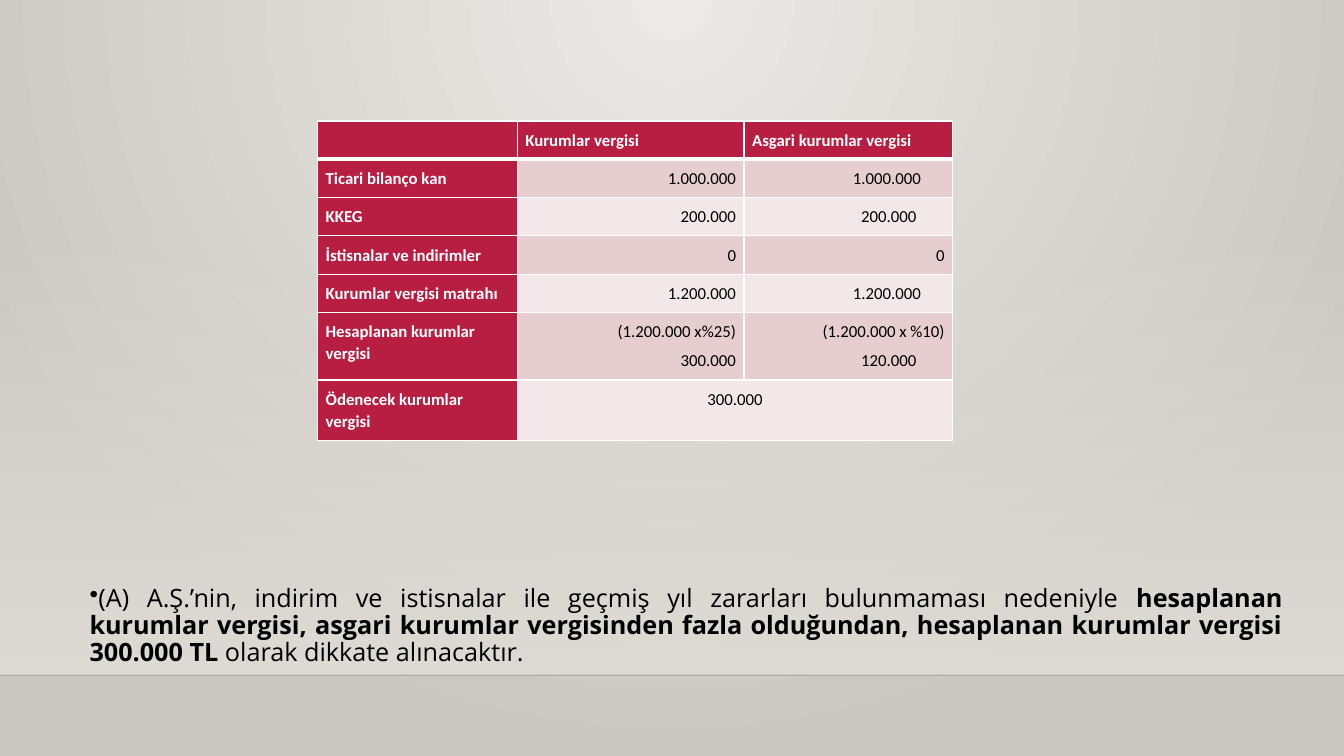
import dataclasses
import typing

import pptx
import pptx.dml.color
import pptx.enum.shapes
import pptx.enum.text
import pptx.oxml.ns
import pptx.oxml.xmlchemy
import pptx.util
from lxml import etree

PX = 9144  # EMU per px, 100 px to the inch
ALIGN = pptx.enum.text.PP_ALIGN
qn = pptx.oxml.ns.qn


@dataclasses.dataclass(frozen=True)
class Theme:
    glow: str = "ECEAE7"
    edge: str = "CAC7C1"
    wall: str = "DFDBD5"
    floor_line: str = "000001"
    accent: str = "B71E42"
    bands: tuple[str, str] = ("E6CDCF", "F3E8E9")
    light: str = "FFFFFF"
    dark: str = "000000"
    table_font: str = "Calibri"
    body_font: str = "Open Sans"
    table_size: float = 12
    body_size: float = 18


THEME = Theme()


@dataclasses.dataclass(frozen=True)
class Line:
    text: str
    align: ALIGN = ALIGN.LEFT
    indent: int = 0
    after: float = 7.5


@dataclasses.dataclass(frozen=True)
class Row:
    height: int
    label: str
    amounts: tuple[tuple[Line, ...], ...]


def right(text: str, after: float = 7.5) -> Line:
    return Line(text, ALIGN.RIGHT, after=after)


COLUMNS = (198, 225, 207)
ROWS = (
    Row(38, "", ((Line("Kurumlar vergisi"),), (Line("Asgari kurumlar vergisi"),))),
    Row(38, "Ticari bilanço kan", ((right("1.000.000"),), (Line("1.000.000", indent=100),))),
    Row(38, "KKEG", ((right("200.000"),), (Line("200.000", indent=108),))),
    Row(38, "İstisnalar ve indirimler", ((right("0"),), (right("0"),))),
    Row(38, "Kurumlar vergisi matrahı", ((right("1.200.000"),), (Line("1.200.000", indent=100),))),
    Row(67, "Hesaplanan kurumlar vergisi", (
        (right("(1.200.000 x%25)", after=5), right("300.000")),
        (right("(1.200.000 x %10)", after=5), Line("120.000", indent=108)),
    )),
    Row(60, "Ödenecek kurumlar vergisi", ((Line("300.000", ALIGN.CENTER),),)),
)
CONCLUSION = (
    ("(A) A.Ş.’nin, indirim ve istisnalar ile geçmiş yıl zararları bulunmaması nedeniyle ", False),
    ("hesaplanan kurumlar vergisi, asgari kurumlar vergisinden fazla olduğundan, "
     "hesaplanan kurumlar vergisi 300.000 TL", True),
    (" olarak dikkate alınacaktır.", False),
)


def rgb(color: str) -> pptx.dml.color.RGBColor:
    return pptx.dml.color.RGBColor.from_string(color)


def child(parent: typing.Any, tag: str, **attributes: typing.Any) -> typing.Any:
    return etree.SubElement(parent, qn(tag), {k: str(v) for k, v in attributes.items()})


def add_span(para: typing.Any, text: str, *, font: str, size: float, color: str,
             bold: bool = False) -> None:
    span = para.add_run()
    span.text = text
    span.font.name = font
    span.font.size = pptx.util.Pt(size)
    span.font.bold = bold
    span.font.color.rgb = rgb(color)


def set_gradient(fill: typing.Any, start: str, end: str) -> None:
    fill.gradient()
    for stop, color in zip(fill.gradient_stops, (start, end)):
        stop.color.rgb = rgb(color)


def draw_backdrop(page: typing.Any, width: int) -> None:
    # Glow spreading from the top centre
    set_gradient(page.background.fill, THEME.glow, THEME.edge)
    gradient = page._element.find(".//" + qn("a:gradFill"))
    gradient.remove(gradient.find(qn("a:lin")))
    glow = child(gradient, "a:path", path="circle")
    child(glow, "a:fillToRect", l=43000, t=0, r=43000, b=100000)

    # Wall fading in above the floor
    wall = page.shapes.add_shape(pptx.enum.shapes.MSO_SHAPE.RECTANGLE,
                                 0, 221 * PX, width * PX, 449 * PX)
    wall.shadow.inherit = False
    wall.line.fill.background()
    set_gradient(wall.fill, THEME.wall, THEME.wall)
    wall.fill.gradient_angle = 270
    child(wall._element.find(".//" + qn("a:srgbClr")), "a:alpha", val=0)

    # Floor edge
    edge = page.shapes.add_connector(pptx.enum.shapes.MSO_CONNECTOR.STRAIGHT,
                                     0, 670 * PX, width * PX, 670 * PX)
    edge.line.width = pptx.util.Pt(1)
    edge.line.color.rgb = rgb(THEME.floor_line)
    child(edge._element.find(".//" + qn("a:srgbClr")), "a:alpha", val=20000)
    child(edge._element.spPr, "a:effectLst")


def style_cell(cell: typing.Any, fill: str, top: float, bottom: float) -> None:
    cell.margin_left = cell.margin_right = cell.margin_top = cell.margin_bottom = 8 * PX
    cell.fill.solid()
    cell.fill.fore_color.rgb = rgb(fill)
    props = cell._tc.get_or_add_tcPr()
    for place, (side, width) in enumerate((("L", 1), ("R", 1), ("T", top), ("B", bottom))):
        border = etree.Element(qn(f"a:ln{side}"), w=str(pptx.util.Pt(width)))
        child(child(border, "a:solidFill"), "a:srgbClr", val=THEME.light)
        props.insert(place, border)


def write_cell(cell: typing.Any, lines: tuple[Line, ...], color: str, bold: bool) -> None:
    for index, line in enumerate(lines):
        frame = cell.text_frame
        para = frame.add_paragraph() if index else frame.paragraphs[0]
        para.alignment = line.align
        para.line_spacing = 1.07
        para.space_after = pptx.util.Pt(line.after)
        if line.indent:
            para._p.get_or_add_pPr().set("marL", str(line.indent * PX))
        if line.text:
            add_span(para, line.text, font=THEME.table_font, size=THEME.table_size,
                     color=color, bold=bold)
        else:
            child(para._p, "a:endParaRPr", sz=int(THEME.table_size * 100))


def draw_tax_table(page: typing.Any) -> None:
    frame = page.shapes.add_table(len(ROWS), len(COLUMNS), 315 * PX, 120 * PX,
                                  sum(COLUMNS) * PX, sum(row.height for row in ROWS) * PX)
    table = frame.table
    table.horz_banding = False
    for column, width in zip(table.columns, COLUMNS):
        column.width = width * PX
    for r, row in enumerate(ROWS):
        table.rows[r].height = row.height * PX
        for c in range(len(COLUMNS)):
            heading = r == 0 or c == 0
            fill = THEME.accent if heading else THEME.bands[(r - 1) % 2]
            style_cell(table.cell(r, c), fill, 3 if r == 1 else 1, 3 if r == 0 else 1)
        for c, lines in enumerate(((Line(row.label),), *row.amounts)):
            heading = r == 0 or c == 0
            write_cell(table.cell(r, c), lines, THEME.light if heading else THEME.dark, heading)
        if len(row.amounts) == 1:
            table.cell(r, 1).merge(table.cell(r, 2))


def draw_conclusion(page: typing.Any) -> None:
    box = page.shapes.add_textbox(79 * PX, 576 * PX, 1203 * PX, 101 * PX)
    box.text_frame.word_wrap = True
    box.text_frame.auto_size = pptx.enum.text.MSO_AUTO_SIZE.SHAPE_TO_FIT_TEXT
    para = box.text_frame.paragraphs[0]
    para.alignment = ALIGN.JUSTIFY
    para.line_spacing = 0.9
    child(para._p.get_or_add_pPr(), "a:buChar", char="•")
    for text, bold in CONCLUSION:
        add_span(para, text, font=THEME.body_font, size=THEME.body_size,
                 color=THEME.dark, bold=bold)


def main() -> None:
    deck = pptx.Presentation()
    width, height = 1333, 750
    deck.slide_width, deck.slide_height = width * PX, height * PX
    page = deck.slides.add_slide(deck.slide_layouts[6])
    draw_backdrop(page, width)
    draw_tax_table(page)
    draw_conclusion(page)
    deck.save("out.pptx")


if __name__ == "__main__":
    main()
